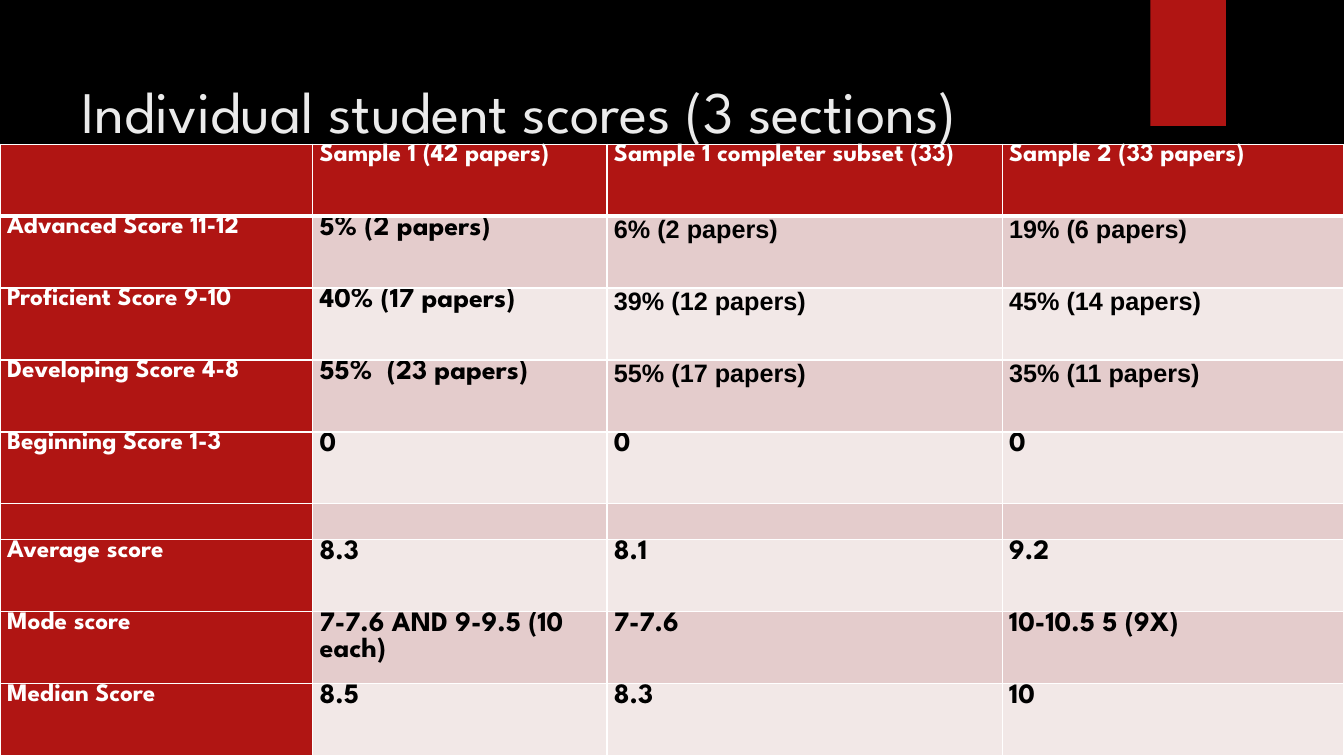
from lxml.etree import SubElement
from pptx import Presentation
from pptx.dml.color import RGBColor
from pptx.enum.shapes import MSO_SHAPE
from pptx.enum.text import MSO_ANCHOR
from pptx.oxml.ns import qn
from pptx.util import Inches, Pt

BLACK = RGBColor(0, 0, 0)
WHITE = RGBColor(255, 255, 255)
RED = RGBColor(0xB0, 0x15, 0x13)
PALE = RGBColor(0xEB, 0xEB, 0xEB)
BANDS = RGBColor(0xF2, 0xE8, 0xE7), RGBColor(0xE4, 0xCC, 0xCC)
FONT = "League Spartan"

TITLE = "Individual student scores (3 sections)"
ROWS = [
    ("", "Sample 1 (42 papers)", "Sample 1 completer subset (33)", "Sample 2 (33 papers)"),
    ("Advanced Score 11-12", "5% (2 papers)", "6% (2 papers)", "19% (6 papers)"),
    ("Proficient Score 9-10", "40% (17 papers)", "39% (12 papers)", "45% (14 papers)"),
    ("Developing Score 4-8", "55%  (23 papers)", "55% (17 papers)", "35% (11 papers)"),
    ("Beginning Score 1-3", "0", "0", "0"),
    ("", "", "", ""),
    ("Average score", "8.3", "8.1", "9.2"),
    ("Mode score", "7-7.6 AND 9-9.5 (10 each)", "7-7.6", "10-10.5 5 (9X)"),
    ("Median Score", "8.5", "8.3", "10"),
]
WIDTHS = 3.1, 2.92, 3.92, 3.39
GAP = 5  # the empty row, half as high as the others
WIDE, HIGH, TOP = 13.33, 7.5, 1.43
UNIT = (HIGH - TOP) / (len(ROWS) - 0.5)


def style(frame, size, color, font=FONT, bold=True):
    for run in frame.paragraphs[0].runs:
        run.font.size, run.font.bold, run.font.name = Pt(size), bold, font
        run.font.color.rgb = color


def border(cell, row):
    """Draw white cell edges, thicker where the header meets the body."""
    props = cell._tc.get_or_add_tcPr()
    for side in "LRTB":
        thick = (row, side) in ((0, "B"), (1, "T"))
        line = SubElement(props, qn("a:ln" + side), w=str(Pt(3 if thick else 1)))
        fill = SubElement(line, qn("a:solidFill"))
        SubElement(fill, qn("a:srgbClr"), val=str(WHITE))


def fill_cell(cell, row, col, text):
    border(cell, row)
    head = row == 0 or col == 0
    cell.fill.solid()
    cell.fill.fore_color.rgb = RED if head else BANDS[row % 2]
    cell.margin_left = cell.margin_right = Inches(0.07)
    cell.margin_top = cell.margin_bottom = 0
    cell.text_frame.text = text
    arial = 1 <= row <= 3 and col >= 2
    style(cell.text_frame, 18 if head or arial else 20,
          WHITE if head else BLACK, "Arial" if arial else FONT)


def main():
    deck = Presentation()
    deck.slide_width, deck.slide_height = Inches(WIDE), Inches(HIGH)
    slide = deck.slides.add_slide(deck.slide_layouts[6])
    slide.background.fill.solid()
    slide.background.fill.fore_color.rgb = BLACK

    tab = slide.shapes.add_shape(MSO_SHAPE.RECTANGLE, Inches(11.41), 0,
                                 Inches(0.75), Inches(1.25))
    tab.shadow.inherit = False
    tab.fill.solid()
    tab.fill.fore_color.rgb = RED
    tab.line.fill.background()

    box = slide.shapes.add_textbox(Inches(0.71), Inches(0.5), Inches(10.79), Inches(0.69))
    frame = box.text_frame
    frame.word_wrap = True
    frame.vertical_anchor = MSO_ANCHOR.TOP
    frame.margin_top, frame.margin_bottom = Inches(0.24), 0
    frame.text = TITLE
    style(frame, 42, PALE, bold=False)

    table = slide.shapes.add_table(len(ROWS), len(WIDTHS), 0, Inches(TOP),
                                   Inches(WIDE), Inches(HIGH - TOP)).table
    for col, width in enumerate(WIDTHS):
        table.columns[col].width = Inches(width)
    for row, texts in enumerate(ROWS):
        table.rows[row].height = Inches(UNIT / 2 if row == GAP else UNIT)
        for col, text in enumerate(texts):
            fill_cell(table.cell(row, col), row, col, text)
    deck.save("out.pptx")


if __name__ == "__main__":
    main()
